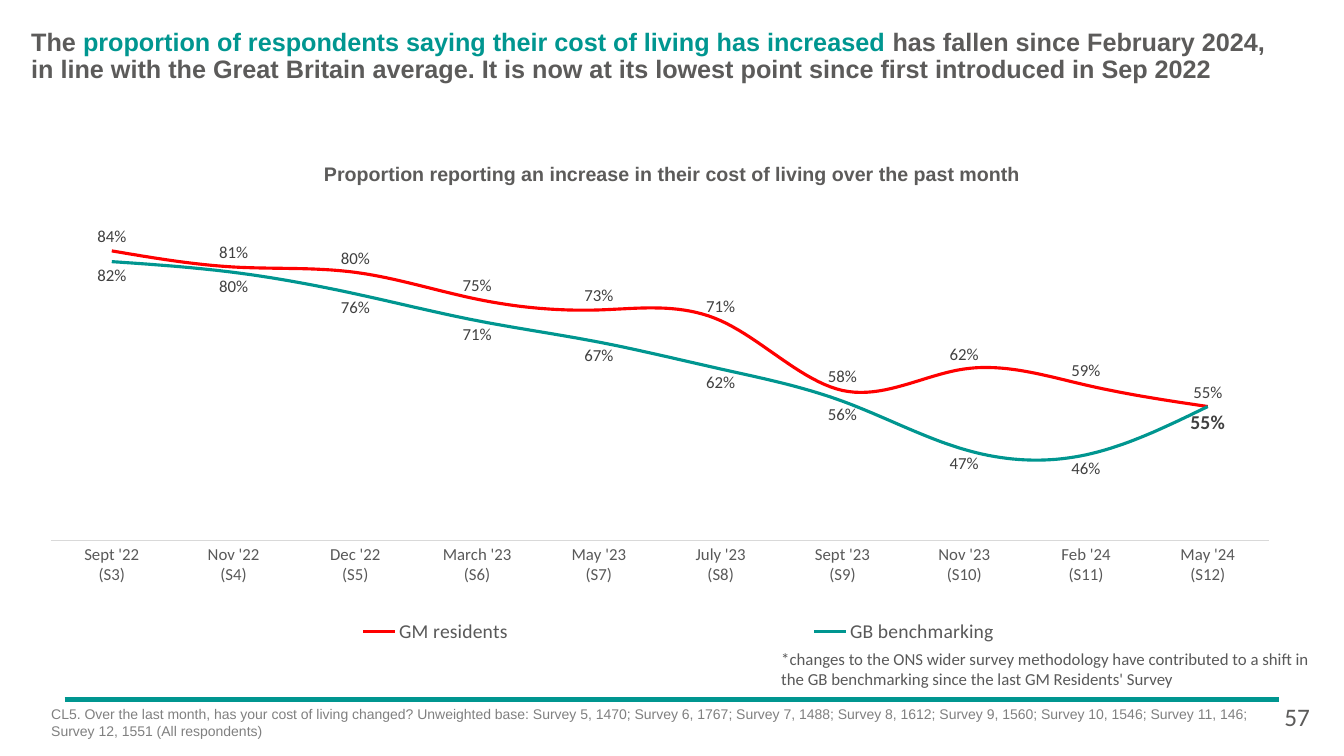
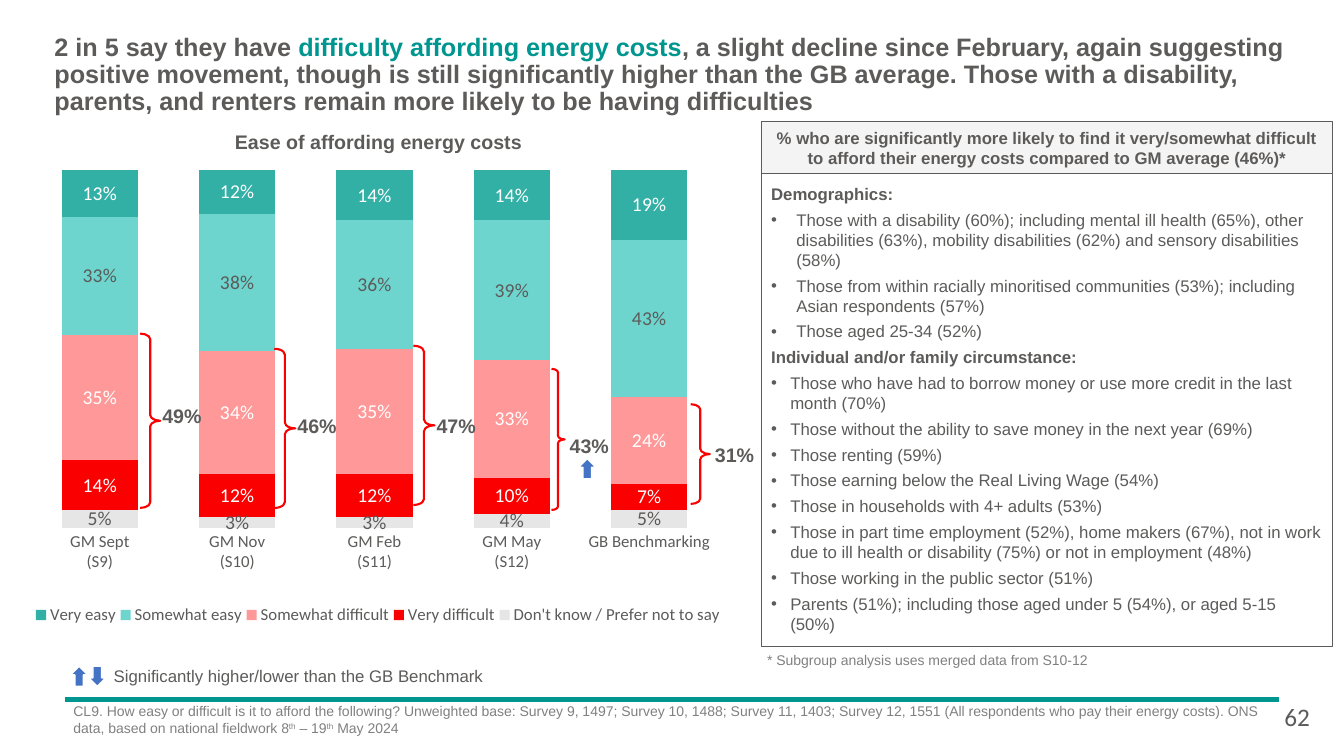
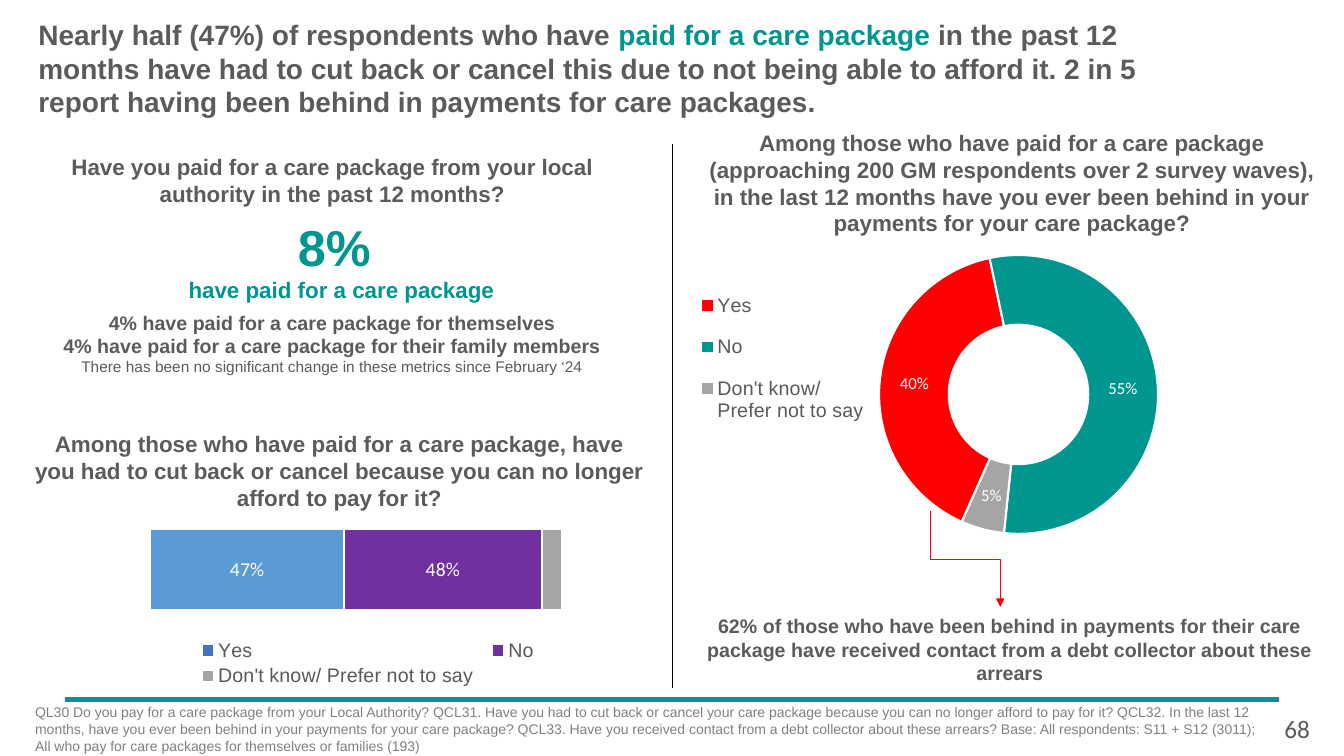
from lxml import etree
from pptx import Presentation
from pptx.chart.data import CategoryChartData
from pptx.dml.color import RGBColor
from pptx.enum.chart import XL_AXIS_CROSSES, XL_CHART_TYPE, XL_LABEL_POSITION, XL_LEGEND_POSITION, XL_TICK_MARK
from pptx.enum.shapes import MSO_CONNECTOR, MSO_SHAPE
from pptx.enum.text import MSO_ANCHOR, MSO_AUTO_SIZE, PP_ALIGN
from pptx.oxml.ns import qn
from pptx.util import Emu, Pt

TEAL = RGBColor(0x00, 0x96, 0x90)
GREY = RGBColor(0x5C, 0x5B, 0x5A)
AXIS_GREY = RGBColor(0x59, 0x59, 0x59)
LABEL_GREY = RGBColor(0x40, 0x40, 0x40)
NOTE_GREY = RGBColor(0x80, 0x80, 0x80)
RULE_GREY = RGBColor(0xD9, 0xD9, 0xD9)
SLICE_GREY = RGBColor(0xA5, 0xA5, 0xA5)
PALE_GREY = RGBColor(0xE7, 0xE6, 0xE6)
HEADER_GREY = RGBColor(0xD0, 0xCE, 0xCE)
RED = RGBColor(0xFF, 0x00, 0x00)
DEEP_RED = RGBColor(0xFA, 0x00, 0x00)
PINK = RGBColor(0xFF, 0x99, 0x99)
MID_TEAL = RGBColor(0x33, 0xB0, 0xA6)
LIGHT_TEAL = RGBColor(0x6D, 0xD5, 0xCE)
BLUE = RGBColor(0x44, 0x72, 0xC4)
SKY = RGBColor(0x5B, 0x9B, 0xD5)
PURPLE = RGBColor(0x70, 0x30, 0xA0)
WHITE = RGBColor(0xFF, 0xFF, 0xFF)
BLACK = RGBColor(0x00, 0x00, 0x00)

PX = 9144
PAGE_WIDTH, PAGE_HEIGHT = 1333, 750

LIVING = {
    "title": ("The ", "proportion of respondents saying their cost of living has increased ",
              "has fallen since February 2024, in line with the Great Britain average. It is now at its "
              "lowest point since first introduced in Sep 2022"),
    "footer": ["CL5. Over the last month, has your cost of living changed? Unweighted base: Survey 5, 1470; "
               "Survey 6, 1767; Survey 7, 1488; Survey 8, 1612; Survey 9, 1560; Survey 10, 1546; "
               "Survey 11, 146; Survey 12, 1551 (All respondents)"],
    "heading": "Proportion reporting an increase in their cost of living over the past month",
    "note": "*changes to the ONS wider survey methodology have contributed to a shift in the GB benchmarking "
            "since the last GM Residents' Survey",
    "months": ["Sept '22", "Nov '22", "Dec '22", "March '23", "May '23",
               "July '23", "Sept '23", "Nov '23", "Feb '24", "May '24"],
    "series": [
        ("GM residents", [0.84, 0.81, 0.8, 0.75, 0.73, 0.71, 0.58, 0.62, 0.59, 0.55], RED, XL_LABEL_POSITION.ABOVE),
        ("GB benchmarking", [0.82, 0.8, 0.76, 0.71, 0.67, 0.62, 0.56, 0.47, 0.46, 0.55], TEAL, XL_LABEL_POSITION.BELOW),
    ],
}

ENERGY = {
    "title": ("2 in 5 say they have ", "difficulty affording energy costs",
              ", a slight decline since February, again suggesting positive movement, though is still "
              "significantly higher than the GB average. Those with a disability, parents, and renters "
              "remain more likely to be having difficulties"),
    "footer": ["CL9. How easy or difficult is it to afford the following? Unweighted base: Survey 9, 1497; "
               "Survey 10, 1488; Survey 11, 1403; Survey 12, 1551 (All respondents who pay their energy costs). "
               "ONS data, based on national fieldwork 8", ("th", {"raised": True}), " – 19",
               ("th", {"raised": True}), " May 2024"],
    "heading": "Ease of affording energy costs",
    "key": "Significantly higher/lower than the GB Benchmark",
    "note": "* Subgroup analysis uses merged data from S10-12",
    "categories": ["GM Sept\n(S9)", "GM Nov\n(S10)", "GM Feb\n(S11)", "GM May\n(S12)", "GB Benchmarking"],
    "series": [
        ("Very easy", [0.13, 0.12, 0.14, 0.14, 0.19], MID_TEAL, WHITE),
        ("Somewhat easy", [0.33, 0.38, 0.36, 0.39, 0.43], LIGHT_TEAL, GREY),
        ("Somewhat difficult", [0.35, 0.34, 0.35, 0.33, 0.24], PINK, WHITE),
        ("Very difficult", [0.14, 0.12, 0.12, 0.1, 0.07], DEEP_RED, WHITE),
        ("Don't know / Prefer not to say", [0.05, 0.03, 0.03, 0.04, 0.05], PALE_GREY, GREY),
    ],
    "braces": [
        ("49%", (139, 331, 20, 173), (161, 401)),
        ("46%", (272, 346, 21, 158), (295, 411)),
        ("47%", (410, 343, 21, 158), (433, 411)),
        ("43%", (547, 366, 13, 140), (565, 430)),
        ("31%", (685, 401, 19, 99), (709, 439)),
    ],
    "arrows": [(88, 661, 0), (70, 661, 180), (574, 455, 180)],
    "panel_heading": "% who are significantly more likely to find it very/somewhat difficult to afford their "
                     "energy costs compared to GM average (46%)*",
    "panel": [
        ("Demographics:", 25, [
            "Those with a disability (60%); including mental ill health (65%), other disabilities (63%), "
            "mobility disabilities (62%) and sensory disabilities (58%)",
            "Those from within racially minoritised communities (53%); including Asian respondents (57%)",
            "Those aged 25-34 (52%)"]),
        ("Individual and/or family circumstance:", 19, [
            "Those who have had to borrow money or use more credit in the last month (70%)",
            "Those without the ability to save money in the next year (69%)",
            "Those renting (59%)",
            "Those earning below the Real Living Wage (54%)",
            "Those in households with 4+ adults (53%)",
            "Those in part time employment (52%), home makers (67%), not in work due to ill health or "
            "disability (75%) or not in employment (48%)",
            "Those working in the public sector (51%)",
            "Parents (51%); including those aged under 5 (54%), or aged 5-15 (50%)"]),
    ],
}

CARE = {
    "title": ("Nearly half (47%) of respondents who have ", "paid for a care package ",
              "in the past 12 months have had to cut back or cancel this due to not being able to afford it. "
              "2 in 5 report having been behind in payments for care packages."),
    "footer": ["QL30 Do you pay for a care package from your Local Authority? QCL31. Have you had to cut back or "
               "cancel your care package because you can no longer afford to pay for it? QCL32. In the last 12 "
               "months, have you ever been behind in your payments for your care package? QCL33. Have you "
               "received contact from a debt collector about these arrears? Base: All respondents: S11 + S12 "
               "(3011); All who pay for care packages for themselves or families (193)"],
    "statements": [
        ((25, 152, 609, 54), 16, GREY,
         [["Have you paid for a care package from your local authority in the past 12 months?"]]),
        ((34, 214, 609, 88), 16, TEAL, [[("8% ", {"size": 36})], ["have paid for a care package"]]),
        ((25, 308, 609, 67), 14, GREY,
         [["4% have paid for a care package for themselves"],
          ["4% have paid for a care package for their family members"],
          [("There has been no significant change in these metrics since February ‘24",
            {"size": 11, "bold": False})]]),
        ((32, 427, 609, 81), 16, GREY,
         [["Among those who have paid for a care package, have you had to cut back or cancel because you can "
           "no longer afford to pay for it?"]]),
        ((699, 128, 609, 108), 16, GREY,
         [["Among those who have paid for a care package (approaching 200 GM respondents over 2 survey waves), "
           "in the last 12 months have you ever been behind in your payments for your care package?"]]),
        ((697, 609, 609, 71), 14, GREY,
         [["62% of those who have been behind in payments for their care package have received contact from a "
           "debt collector about these arrears"]]),
    ],
    "answers": ["Yes", "No", "Don't know/ Prefer not to say"],
    "cut_back": [(0.47, BLUE, SKY), (0.48, PURPLE, PURPLE), (0.05, SLICE_GREY, SLICE_GREY)],
    "behind": ([0.4, 0.55, 0.05], [RED, TEAL, SLICE_GREY]),
}


def px(*lengths):
    return [Emu(length * PX) for length in lengths]


def set_font(font, size, color, name="Arial", bold=False):
    font.size, font.name, font.bold = Pt(size), name, bold
    font.color.rgb = color


def add_runs(para, runs, **base):
    for item in runs:
        text, changes = (item, {}) if isinstance(item, str) else item
        style = {**base, **changes}
        raised = style.pop("raised", False)
        span = para.add_run()
        span.text = text
        set_font(span.font, **style)
        if raised:
            span._r.get_or_add_rPr().set("baseline", "30000")


def set_margins(frame, side, top):
    frame.margin_left = frame.margin_right = Emu(side * PX)
    frame.margin_top = frame.margin_bottom = Emu(top * PX)


def add_text(page, place, paragraphs, align=PP_ALIGN.LEFT, padded=False, wrap=True, **style):
    box = page.shapes.add_textbox(*px(*place))
    frame = box.text_frame
    frame.word_wrap = wrap
    if not padded:
        set_margins(frame, 0, 0)
    for index, runs in enumerate(paragraphs):
        para = frame.add_paragraph() if index else frame.paragraphs[0]
        para.alignment = align
        add_runs(para, runs, **style)


def add_heading(page, place, text):
    add_text(page, place, [[text]], PP_ALIGN.CENTER, size=14, color=GREY, bold=True)


def add_line(page, kind, ends, color, weight, arrow=False):
    line = page.shapes.add_connector(kind, *px(*ends))
    line.line.color.rgb = color
    line.line.width = Pt(weight)
    if arrow:
        etree.SubElement(line.line._get_or_add_ln(), qn("a:tailEnd"), type="triangle")
    etree.SubElement(line._element.spPr, qn("a:effectLst"))
    return line


def add_shape(page, kind, place, fill, line_color, weight):
    shape = page.shapes.add_shape(kind, *px(*place))
    shape.shadow.inherit = False
    if fill is None:
        shape.fill.background()
    else:
        shape.fill.solid()
        shape.fill.fore_color.rgb = fill
    shape.line.color.rgb = line_color
    shape.line.width = Pt(weight)
    return shape


def add_page(deck, content, number, title_place, title_size, spacing, anchor, padding, footer_place, number_top):
    page = deck.slides.add_slide(deck.slide_layouts[5])
    title = page.shapes.title
    title.left, title.top, title.width, title.height = px(*title_place)
    frame = title.text_frame
    frame.auto_size = MSO_AUTO_SIZE.NONE
    frame.word_wrap = True
    frame.vertical_anchor = anchor
    set_margins(frame, *padding)
    para = frame.paragraphs[0]
    para.alignment = PP_ALIGN.LEFT
    para.line_spacing = spacing
    before, key, after = content["title"]
    add_runs(para, [before, (key, {"color": TEAL}), after], size=title_size, color=GREY, bold=True)
    add_text(page, footer_place, [content["footer"]], padded=True, size=10, color=NOTE_GREY)
    add_text(page, (1264, number_top, 53, 40), [[str(number)]], padded=True, size=18, color=GREY, name="Calibri")
    return page


def make_layout(x, y, width, height, inner=False):
    layout = etree.Element(qn("c:layout"))
    manual = etree.SubElement(layout, qn("c:manualLayout"))
    settings = [("layoutTarget", "inner")] if inner else []
    settings += [("xMode", "edge"), ("yMode", "edge"), ("x", x), ("y", y), ("w", width), ("h", height)]
    for name, value in settings:
        etree.SubElement(manual, qn("c:" + name), val=str(value))
    return layout


def add_chart(page, kind, place, categories, series, plot_area, legend_area, legend_style,
              legend_side=XL_LEGEND_POSITION.BOTTOM):
    data = CategoryChartData(number_format="0%")
    data.categories = categories
    for name, values in series:
        data.add_series(name, values)
    chart = page.shapes.add_chart(kind, *px(*place), data).chart
    chart.has_title = False
    set_font(chart.font, 10, BLACK, "Calibri")
    chart.plots[0].vary_by_categories = False
    chart.has_legend = True
    legend = chart.legend
    legend.position = legend_side
    legend.include_in_layout = False
    set_font(legend.font, *legend_style)
    plot_node = chart._chartSpace.chart.plotArea
    for parent in (plot_node, legend._element):
        for old in parent.findall(qn("c:layout")):
            parent.remove(old)
    plot_node.insert(0, make_layout(*plot_area, inner=True))
    legend._element.find(qn("c:legendPos")).addnext(make_layout(*legend_area))
    return chart


def format_axes(chart, low, high, label_color=GREY):
    values, names = chart.value_axis, chart.category_axis
    values.minimum_scale, values.maximum_scale = low, high
    values.has_major_gridlines = False
    values.visible = False
    names.major_tick_mark = names.minor_tick_mark = XL_TICK_MARK.NONE
    set_font(names.tick_labels.font, 12, label_color, "Calibri")


def add_labels(series, size, color, position=None):
    labels = series.data_labels
    labels.show_value = True
    labels.number_format, labels.number_format_is_linked = "0%", False
    set_font(labels.font, size, color, "Calibri")
    if position is not None:
        labels.position = position


def paint(part, color, outlined=False):
    part.format.fill.solid()
    part.format.fill.fore_color.rgb = color
    if outlined:
        part.format.line.color.rgb = WHITE
        part.format.line.width = Pt(1.5)


def build_living(deck):
    page = add_page(deck, LIVING, 57, (31, 29, 1243, 55), 18, 0.9, MSO_ANCHOR.MIDDLE, (0, 0),
                    (41, 695, 1225, 56), 691)
    add_heading(page, (130, 161, 1074, 24), LIVING["heading"])
    months = [f"{month}\n(S{wave})" for wave, month in enumerate(LIVING["months"], 3)]
    chart = add_chart(page, XL_CHART_TYPE.LINE, (50, 217, 1233, 450), months,
                      [item[:2] for item in LIVING["series"]], (0, 0, 0.98, 0.71),
                      (0.01, 0.86, 0.99, 0.1), (14, AXIS_GREY, "Calibri"))
    format_axes(chart, 0.3, 0.9, AXIS_GREY)
    chart.category_axis.format.line.color.rgb = RULE_GREY
    chart.category_axis.format.line.width = Pt(0.75)
    for series, (_, _, color, position) in zip(chart.plots[0].series, LIVING["series"]):
        series.smooth = True
        series.format.line.color.rgb = color
        series.format.line.width = Pt(2.25)
        add_labels(series, 12, LABEL_GREY, position)
    latest = chart.plots[0].series[1].points[9].data_label
    set_font(latest.font, 14, LABEL_GREY, "Calibri", True)
    latest.position = XL_LABEL_POSITION.BELOW
    add_text(page, (765, 639, 568, 50), [[LIVING["note"]]], padded=True, size=12, color=AXIS_GREY, name="Calibri")


def fill_panel(frame):
    lines = []
    for heading, indent, items in ENERGY["panel"]:
        lines += [(heading, 0)] + [(item, indent) for item in items]
    for index, (text, indent) in enumerate(lines):
        para = frame.add_paragraph() if index else frame.paragraphs[0]
        para.alignment = PP_ALIGN.LEFT
        if indent:
            properties = para._p.get_or_add_pPr()
            properties.set("marL", str(indent * PX))
            properties.set("indent", str(-indent * PX))
            etree.SubElement(properties, qn("a:buFont"), typeface="Arial")
            etree.SubElement(properties, qn("a:buChar"), char="•")
        para.space_after = Pt(4)
        add_runs(para, [text], size=12, color=GREY, bold=not indent)


def build_energy(deck):
    page = add_page(deck, ENERGY, 62, (44, 29, 1258, 79), 18, 0.9, MSO_ANCHOR.TOP, (10, 5),
                    (63, 692, 1198, 56), 691)
    add_heading(page, (120, 129, 511, 24), ENERGY["heading"])
    chart = add_chart(page, XL_CHART_TYPE.COLUMN_STACKED_100, (31, 164, 688, 507), ENERGY["categories"],
                      [item[:2] for item in ENERGY["series"]], (0, 0.01, 0.99, 0.7),
                      (0, 0.84, 1, 0.08), (12, GREY, "Calibri"))
    format_axes(chart, 0, 1)
    chart.category_axis.format.line.fill.background()
    chart.value_axis.reverse_order = True
    chart.value_axis.crosses = XL_AXIS_CROSSES.MAXIMUM
    chart.plots[0].gap_width, chart.plots[0].overlap = 80, 100
    for series, (_, _, color, label_color) in zip(chart.plots[0].series, ENERGY["series"]):
        paint(series, color)
        add_labels(series, 14, label_color, XL_LABEL_POSITION.CENTER)

    for text, place, corner in ENERGY["braces"]:
        brace = add_shape(page, MSO_SHAPE.RIGHT_BRACE, place, None, DEEP_RED, 1.5)
        brace.adjustments[0], brace.adjustments[1] = 0.28, 0.5
        add_text(page, (*corner, 39, 24), [[text]], wrap=False, size=14, color=GREY, bold=True)
    for left, top, rotation in ENERGY["arrows"]:
        arrow = add_shape(page, MSO_SHAPE.DOWN_ARROW, (left, top, 17, 20), BLUE, WHITE, 1)
        arrow.rotation = rotation
    add_text(page, (103, 656, 390, 30), [[ENERGY["key"]]], padded=True, wrap=False, size=12, color=GREY)

    header = add_shape(page, MSO_SHAPE.RECTANGLE, (755, 121, 567, 52), HEADER_GREY, GREY, 0.75)
    shade = header._element.spPr.find(qn("a:solidFill"))[0]
    etree.SubElement(shade, qn("a:alpha"), val="21000")
    header.text_frame.word_wrap = True
    header.text_frame.vertical_anchor = MSO_ANCHOR.MIDDLE
    para = header.text_frame.paragraphs[0]
    para.alignment = PP_ALIGN.CENTER
    para.space_after = Pt(4)
    add_runs(para, [ENERGY["panel_heading"]], size=12, color=GREY, bold=True)
    panel = add_shape(page, MSO_SHAPE.RECTANGLE, (755, 172, 567, 469), WHITE, GREY, 0.75)
    panel.text_frame.word_wrap = True
    panel.text_frame.vertical_anchor = MSO_ANCHOR.TOP
    set_margins(panel.text_frame, 10, 10)
    fill_panel(panel.text_frame)
    add_text(page, (751, 641, 358, 27), [[ENERGY["note"]]], padded=True, size=10, color=NOTE_GREY)


def build_care(deck):
    page = add_page(deck, CARE, 68, (38, 17, 1150, 101), 20, 1.0, MSO_ANCHOR.MIDDLE, (0, 0),
                    (25, 693, 1239, 52), 703)
    legend_style = (14, AXIS_GREY, "Arial")
    cut_back = add_chart(page, XL_CHART_TYPE.BAR_STACKED, (38, 480, 654, 207), ["1"],
                         [(name, [item[0]]) for name, item in zip(CARE["answers"], CARE["cut_back"])],
                         (0.17, 0.02, 0.75, 0.78), (0.23, 0.73, 0.54, 0.26), legend_style)
    format_axes(cut_back, 0, 1.2)
    cut_back.category_axis.visible = False
    cut_back.plots[0].gap_width, cut_back.plots[0].overlap = 100, 100
    for series, (value, key_color, bar_color) in zip(cut_back.plots[0].series, CARE["cut_back"]):
        paint(series, key_color, True)
        paint(series.points[0], bar_color, True)
        if value > 0.1:
            add_labels(series, 14, WHITE)

    values, colors = CARE["behind"]
    behind = add_chart(page, XL_CHART_TYPE.DOUGHNUT, (688, 249, 608, 401), CARE["answers"],
                       [("Series 1", values)], (0.3, 0.01, 0.46, 0.69), (0, 0.06, 0.29, 0.41),
                       legend_style, XL_LEGEND_POSITION.LEFT)
    plot = behind.plots[0]
    plot.vary_by_categories = True
    ring = plot._element
    for name in ("c:firstSliceAng", "c:holeSize"):
        for old in ring.findall(qn(name)):
            ring.remove(old)
    etree.SubElement(ring, qn("c:firstSliceAng"), val="204")
    etree.SubElement(ring, qn("c:holeSize"), val="55")
    for index, color in enumerate(colors):
        paint(plot.series[0].points[index], color, True)
    add_labels(plot.series[0], 12, WHITE)

    for place, size, color, paragraphs in CARE["statements"]:
        add_text(page, place, paragraphs, PP_ALIGN.CENTER, size=size, color=color, bold=True)
    add_line(page, MSO_CONNECTOR.STRAIGHT, (667, 143, 667, 683), BLACK, 0.5)
    elbow = add_line(page, MSO_CONNECTOR.ELBOW, (1005, 520, 910, 589), RED, 0.5, True)
    elbow._element.spPr.find(qn("a:xfrm")).set("rot", str(270 * 60000))


def main():
    deck = Presentation()
    deck.slide_width, deck.slide_height = px(PAGE_WIDTH, PAGE_HEIGHT)
    build_living(deck)
    rule = add_line(deck.slides[0], MSO_CONNECTOR.STRAIGHT, (64, 694, 1269, 694), TEAL, 3)
    deck.slide_layouts[5].shapes._spTree.append(rule._element)
    build_energy(deck)
    build_care(deck)
    deck.save("out.pptx")


if __name__ == "__main__":
    main()
